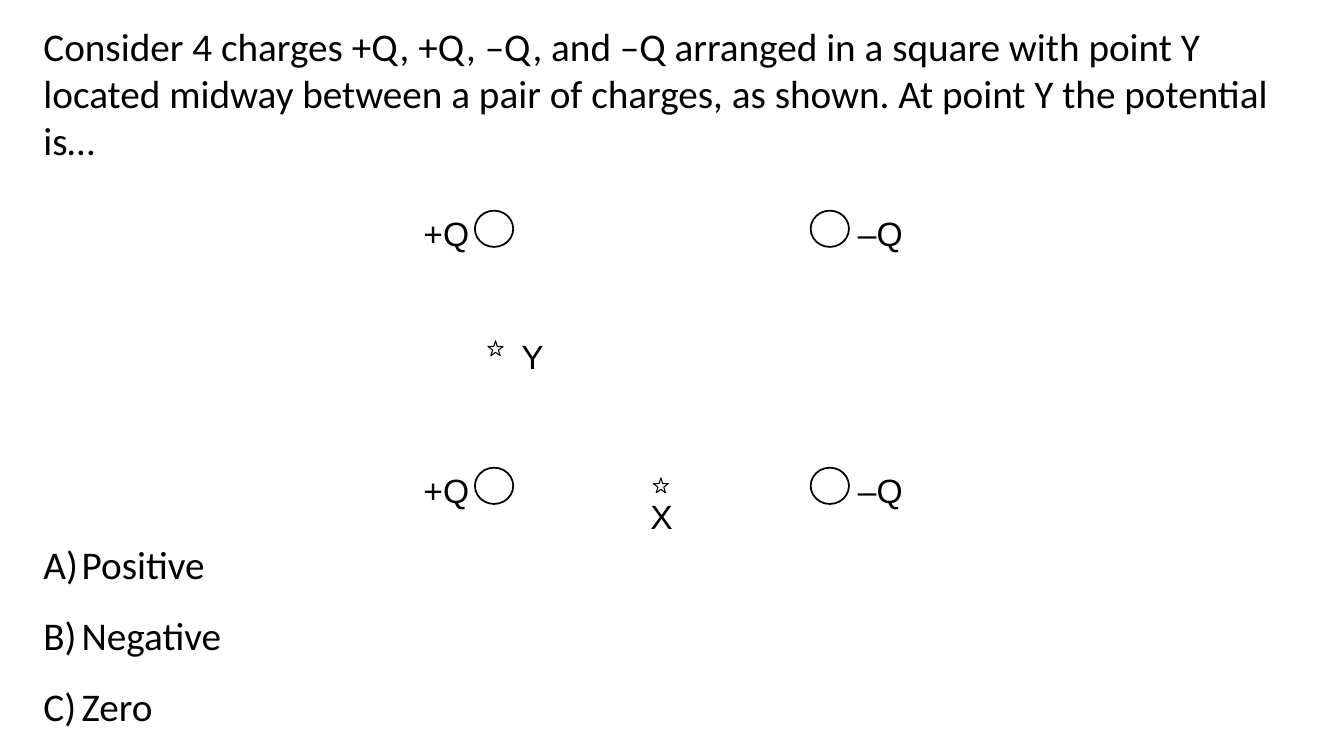
from dataclasses import dataclass

import pptx
import pptx.dml.color
import pptx.enum.shapes
import pptx.enum.text
import pptx.oxml.ns
import pptx.util
from lxml import etree

Shape = pptx.enum.shapes.MSO_SHAPE
Anchor = pptx.enum.text.MSO_ANCHOR
Align = pptx.enum.text.PP_ALIGN
AutoSize = pptx.enum.text.MSO_AUTO_SIZE


@dataclass(frozen=True)
class Theme:
    ink: pptx.dml.color.RGBColor = pptx.dml.color.RGBColor(0, 0, 0)
    paper: pptx.dml.color.RGBColor = pptx.dml.color.RGBColor(255, 255, 255)
    text_font: str = "Calibri"
    label_font: str = "Arial"
    text_size: float = 28
    label_size: float = 24


@dataclass(frozen=True)
class Box:
    """Left, top, width and height in percent of the slide."""
    left: float
    top: float
    width: float
    height: float


@dataclass(frozen=True)
class Mark:
    """A shape given by its centre; line 0 means no outline."""
    kind: Shape
    x: float
    y: float
    width: float
    height: float
    line: float = 0
    text: str = ""


THEME = Theme()
WIDTH = pptx.util.Inches(13.33)
HEIGHT = pptx.util.Inches(7.5)
QUESTION = ("Consider 4 charges +Q, +Q, –Q, and –Q arranged in a square with point Y "
            "located midway between a pair of charges, as shown. At point Y the potential is…")
ANSWERS = ["Positive", "Negative", "Zero"]
# Columns of the square: charge centre, label centre, label text
COLUMNS = [(36.76, 33.46, "+Q"), (61.74, 65.79, "–Q")]
ROWS = [30.27, 64.27]
LABEL_DROP = 0.53


def place(shape, box: Box) -> None:
    shape.left, shape.width = (round(WIDTH * share / 100) for share in (box.left, box.width))
    shape.top, shape.height = (round(HEIGHT * share / 100) for share in (box.top, box.height))


def style(paragraph, font: str, size: float) -> None:
    paragraph.alignment = Align.LEFT
    paragraph.font.name = font
    paragraph.font.size = pptx.util.Pt(size)
    paragraph.font.color.rgb = THEME.ink


def fill_placeholder(shape, box: Box, lines: list[str], wrap: bool) -> None:
    place(shape, box)
    frame = shape.text_frame
    frame.text = "\n".join(lines)
    frame.word_wrap = wrap
    frame.auto_size = AutoSize.SHAPE_TO_FIT_TEXT
    frame.vertical_anchor = Anchor.TOP
    for paragraph in frame.paragraphs:
        style(paragraph, THEME.text_font, THEME.text_size)
        paragraph.space_before = pptx.util.Pt(0)


def letter_answers(shape) -> None:
    for paragraph in shape.text_frame.paragraphs:
        paragraph.line_spacing = 1.5
        properties = paragraph._p.get_or_add_pPr()
        indent = pptx.util.Inches(0.38)
        properties.set("marL", str(indent))
        properties.set("indent", str(-indent))
        bullet_font = etree.SubElement(properties, pptx.oxml.ns.qn("a:buFont"))
        bullet_font.set("typeface", "+mj-lt")
        numbering = etree.SubElement(properties, pptx.oxml.ns.qn("a:buAutoNum"))
        numbering.set("type", "alphaUcParenR")


def draw_mark(slide, mark: Mark) -> None:
    shape = slide.shapes.add_shape(mark.kind, 0, 0, 0, 0)
    place(shape, Box(mark.x - mark.width / 2, mark.y - mark.height / 2,
                     mark.width, mark.height))
    shape.shadow.inherit = False
    shape.fill.solid()
    shape.fill.fore_color.rgb = THEME.paper
    if mark.line:
        shape.line.color.rgb = THEME.ink
        shape.line.width = pptx.util.Pt(mark.line)
    else:
        shape.line.fill.background()
    if mark.text:
        frame = shape.text_frame
        frame.text = mark.text
        frame.vertical_anchor = Anchor.MIDDLE
        frame.margin_left = frame.margin_right = frame.margin_top = frame.margin_bottom = 0
        style(frame.paragraphs[0], THEME.label_font, THEME.label_size)


def label(x: float, y: float, text: str) -> Mark:
    return Mark(Shape.RECTANGLE, x, y, 3.9, 6.07, text=text)


def star(x: float, y: float) -> Mark:
    return Mark(Shape.STAR_5_POINT, x, y, 1.13, 2, line=0.75)


def charge(x: float, y: float) -> Mark:
    return Mark(Shape.OVAL, x, y, 2.85, 4.8, line=1.25)


def main() -> None:
    presentation = pptx.Presentation()
    presentation.slide_width, presentation.slide_height = WIDTH, HEIGHT
    slide = presentation.slides.add_slide(presentation.slide_layouts[1])

    # Question and lettered answers
    fill_placeholder(slide.shapes.title, Box(2.48, 2.27, 95.2, 20.13), [QUESTION], True)
    answers = slide.placeholders[1]
    fill_placeholder(answers, Box(2.48, 67.73, 14.85, 29.6), ANSWERS, False)
    letter_answers(answers)

    # Square of charges, labels below the circles in stacking order
    labels = [label(label_x, y + LABEL_DROP, text) for _, label_x, text in COLUMNS for y in ROWS]
    charges = [charge(x, y) for x, _, _ in COLUMNS for y in ROWS]

    # Points Y and X
    points = [star(36.87, 46.07), label(40.74, 47.07, "Y"),
              star(49.17, 64.2), label(50.34, 68.27, "X")]

    for mark in labels + charges + points:
        draw_mark(slide, mark)
    presentation.save("out.pptx")


if __name__ == "__main__":
    main()
